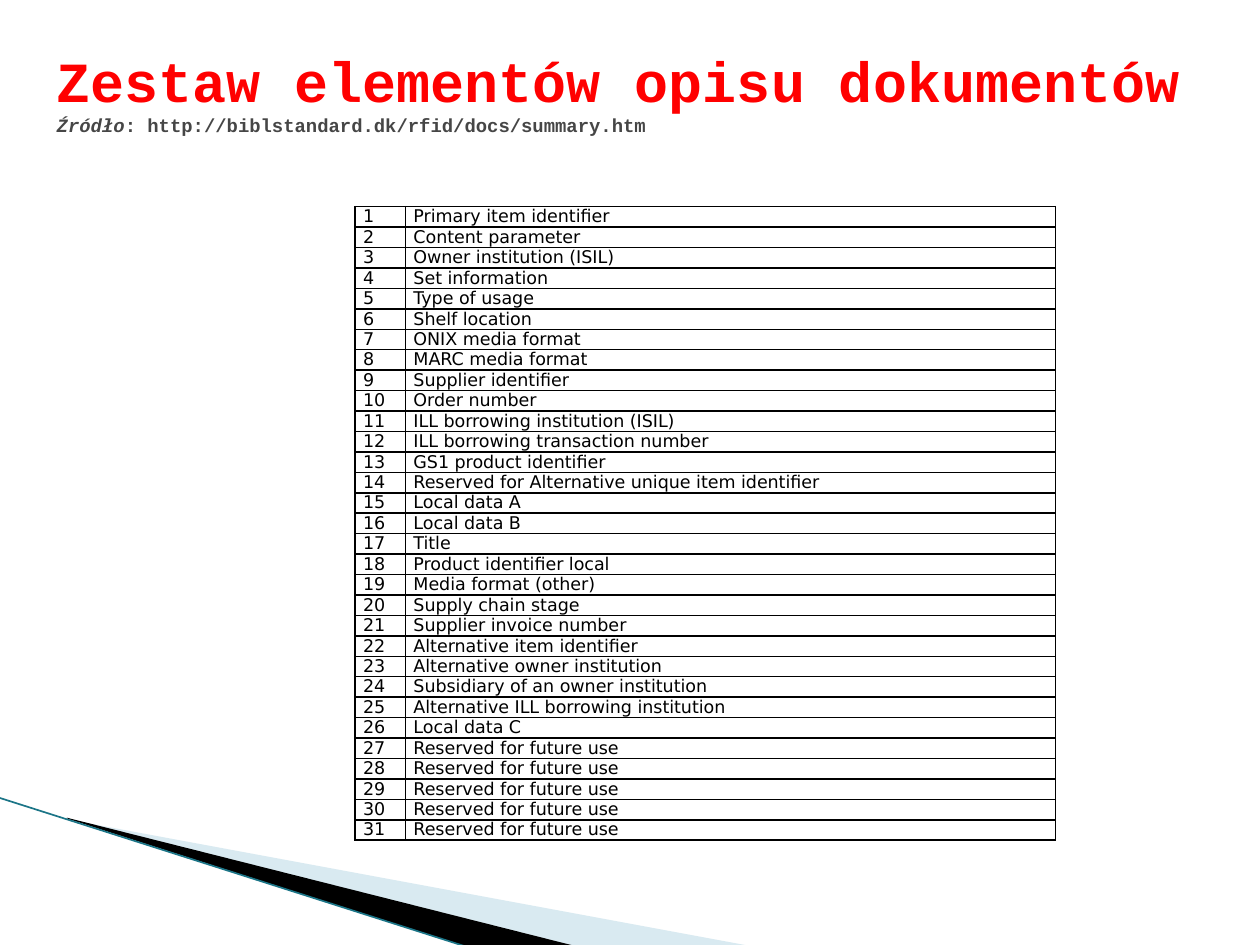
from lxml import etree
from pptx import Presentation
from pptx.dml.color import RGBColor
from pptx.enum.shapes import MSO_CONNECTOR
from pptx.enum.text import MSO_ANCHOR, MSO_AUTO_SIZE, PP_ALIGN
from pptx.oxml.ns import qn
from pptx.util import Pt

STRAIGHT = MSO_CONNECTOR.STRAIGHT
MIDDLE = MSO_ANCHOR.MIDDLE
TOP = MSO_ANCHOR.TOP
NO_AUTOFIT = MSO_AUTO_SIZE.NONE
LEFT = PP_ALIGN.LEFT

RED = RGBColor(0xFF, 0x00, 0x00)
GREY = RGBColor(0x46, 0x46, 0x46)
BLACK = RGBColor(0x00, 0x00, 0x00)
PALE_BLUE = RGBColor(0xA0, 0xCB, 0xDC)
TEAL = RGBColor(0x1B, 0x75, 0x87)

ELEMENTS = [
    "Primary item identifier",
    "Content parameter",
    "Owner institution (ISIL)",
    "Set information",
    "Type of usage",
    "Shelf location",
    "ONIX media format",
    "MARC media format",
    "Supplier identifier",
    "Order number",
    "ILL borrowing institution (ISIL)",
    "ILL borrowing transaction number",
    "GS1 product identifier",
    "Reserved for Alternative unique item identifier",
    "Local data A",
    "Local data B",
    "Title",
    "Product identifier local",
    "Media format (other)",
    "Supply chain stage",
    "Supplier invoice number",
    "Alternative item identifier",
    "Alternative owner institution",
    "Subsidiary of an owner institution",
    "Alternative ILL borrowing institution",
    "Local data C",
] + ["Reserved for future use"] * 5
ROW_HEIGHT = 11.7
COLUMN_WIDTHS = (28.8, 371.5)


def add_run(paragraph, text, font="Courier New", size=10.8, color=GREY, bold=True, italic=False):
    run = paragraph.add_run()
    run.text = text
    run.font.name = font
    run.font.size = Pt(size)
    run.font.color.rgb = color
    run.font.bold = bold
    run.font.italic = italic


presentation = Presentation()
presentation.slide_width = Pt(720)
presentation.slide_height = Pt(540)
slide = presentation.slides.add_slide(presentation.slide_layouts[5])

# Corner wedges: colour, opacity in percent, outline points
wedges = [
    (PALE_BLUE, 40, [(39.6, 468.5), (428.4, 540.5), (328.3, 540.5), (39.6, 468)]),
    (BLACK, 100, [(38.2, 467.3), (329, 540.7), (267.8, 541.4), (38.9, 468)]),
]
for color, opacity, points in wedges:
    corners = [(Pt(x), Pt(y)) for x, y in points]
    builder = slide.shapes.build_freeform(*corners[0])
    builder.add_line_segments(corners[1:], close=True)
    wedge = builder.convert_to_shape()
    wedge.shadow.inherit = False
    wedge.fill.solid()
    wedge.fill.fore_color.rgb = color
    wedge.line.fill.background()
    if opacity < 100:
        color_element = wedge.fill._xPr.find(qn("a:solidFill"))[0]
        etree.SubElement(color_element, qn("a:alpha"), val=str(opacity * 1000))

# Corner line
edge = slide.shapes.add_connector(STRAIGHT, Pt(-0.7), Pt(455.8), Pt(267.8), Pt(541.4))
edge.line.color.rgb = TEAL
edge.line.width = Pt(0.95)
etree.SubElement(edge._element.spPr, qn("a:effectLst"))

# Numbered table of description elements
table = slide.shapes.add_table(
    len(ELEMENTS), len(COLUMN_WIDTHS), Pt(203), Pt(118.1),
    Pt(sum(COLUMN_WIDTHS)), Pt(ROW_HEIGHT * len(ELEMENTS)),
).table
table.first_row = False
table.horz_banding = False
for column, width in zip(table.columns, COLUMN_WIDTHS):
    column.width = Pt(width)

for index, element in enumerate(ELEMENTS):
    table.rows[index].height = Pt(ROW_HEIGHT)
    for cell, text in zip(table.rows[index].cells, (str(index + 1), element)):
        cell.margin_left = cell.margin_right = Pt(4.5)
        cell.margin_top = cell.margin_bottom = 0
        cell.vertical_anchor = TOP
        add_run(cell.text_frame.paragraphs[0], text,
                font="DejaVu Sans", size=10, color=BLACK, bold=False)
        properties = cell._tc.get_or_add_tcPr()
        for side in ("a:lnL", "a:lnR", "a:lnT", "a:lnB"):
            border = etree.SubElement(properties, qn(side), w=str(Pt(1)))
            border_fill = etree.SubElement(border, qn("a:solidFill"))
            etree.SubElement(border_fill, qn("a:srgbClr"), val=str(BLACK))
        cell.fill.background()

# Title with its source line, in front of the rest
title = slide.shapes.title
title.left, title.top, title.width, title.height = Pt(25.2), Pt(9.4), Pt(657.4), Pt(85)
slide.shapes._spTree.append(title._element)
frame = title.text_frame
frame.word_wrap = True
frame.auto_size = NO_AUTOFIT
frame.vertical_anchor = MIDDLE
paragraph = frame.paragraphs[0]
paragraph.alignment = LEFT
add_run(paragraph, "Zestaw elementów opisu dokumentów", size=32.4, color=RED)
paragraph.add_line_break()
add_run(paragraph, "Źródło", italic=True)
add_run(paragraph, ": http://biblstandard.dk/rfid/docs/summary.htm")

presentation.save("out.pptx")
